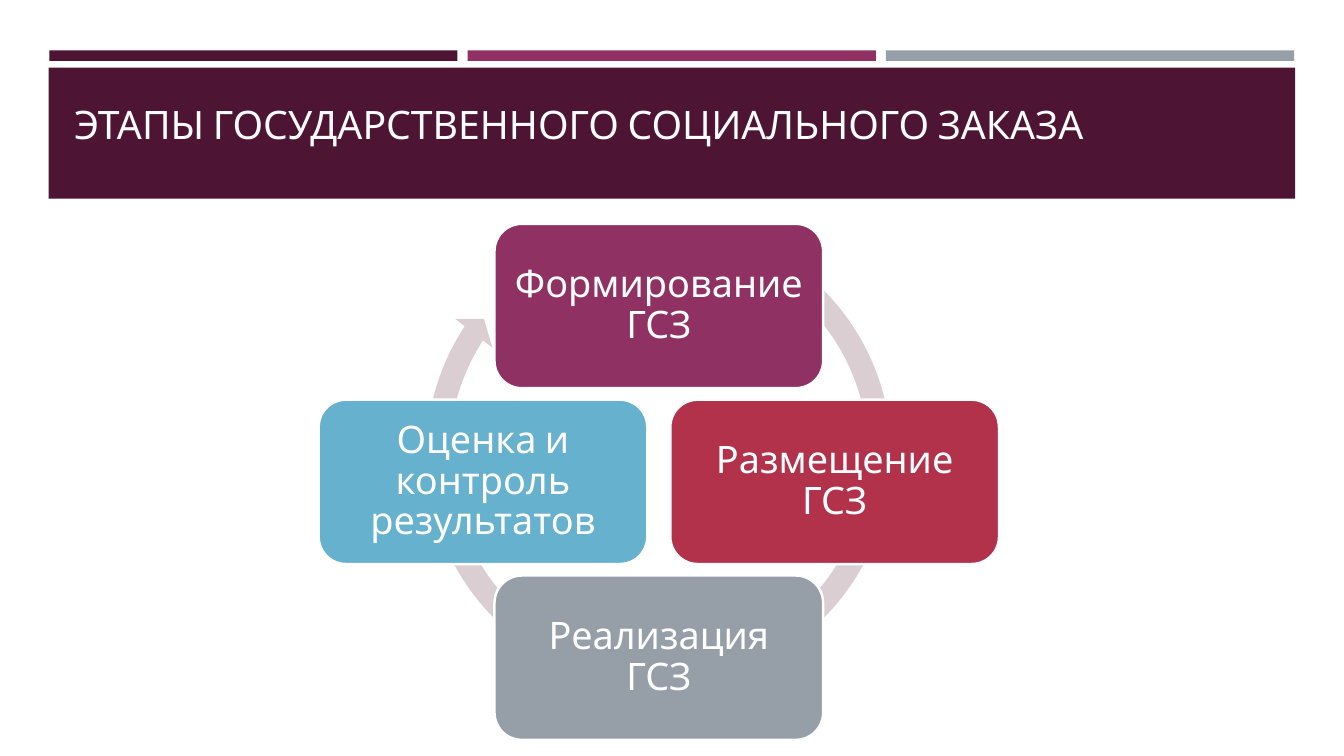
"""Build a slide showing the four-stage cycle of a state social order."""
from pptx import Presentation
from pptx.dml.color import RGBColor
from pptx.enum import shapes, text
from pptx.util import Pt

PLUM = RGBColor(0x4D, 0x14, 0x34)
MAGENTA = RGBColor(0x90, 0x31, 0x63)
GREY = RGBColor(0x96, 0x9F, 0xA7)
RED = RGBColor(0xB2, 0x32, 0x4B)
BLUE = RGBColor(0x66, 0xB1, 0xCE)
PALE = RGBColor(0xDB, 0xCE, 0xD3)
WHITE = RGBColor(0xFF, 0xFF, 0xFF)
FONT = "Cabin"

TITLE = "ЭТАПЫ ГОСУДАРСТВЕННОГО СОЦИАЛЬНОГО ЗАКАЗА"
BAR_COLORS = [PLUM, MAGENTA, GREY]
STAGES = [
    ("Формирование ГСЗ", MAGENTA, (0, -1)),
    ("Размещение ГСЗ", RED, (1, 0)),
    ("Реализация ГСЗ", GREY, (0, 1)),
    ("Оценка и контроль результатов", BLUE, (-1, 0)),
]
ARROW_ADJUSTMENTS = [0.047, 2.729, 127.899, 180.593, 0.048]

BAR_LEFT, BAR_WIDTH, BAR_PITCH = 35.2, 291.6, 298.8
CENTER_X, CENTER_Y, RADIUS = 470.6, 344.2, 125.6
STAGE_WIDTH, STAGE_HEIGHT = 234.8, 117.4
ARROW_SIZE, ARROW_TOP = 349.2, 149.8


def add_filled(slide, kind, left, top, width, height, color):
    """Add a flat preset shape without an outline."""
    shape = slide.shapes.add_shape(kind, Pt(left), Pt(top), Pt(width), Pt(height))
    shape.shadow.inherit = False
    shape.fill.solid()
    shape.fill.fore_color.rgb = color
    shape.line.fill.background()
    return shape


def write(shape, content, size, alignment, anchor):
    """Put one white paragraph into a shape."""
    frame = shape.text_frame
    frame.text = content
    frame.word_wrap = True
    frame.vertical_anchor = anchor
    paragraph = frame.paragraphs[0]
    paragraph.alignment = alignment
    paragraph.font.name = FONT
    paragraph.font.size = Pt(size)
    paragraph.font.color.rgb = WHITE
    return frame


def add_header(slide):
    """Add the three bars, the title band and the title."""
    rectangle = shapes.MSO_SHAPE.RECTANGLE
    for index, color in enumerate(BAR_COLORS):
        add_filled(slide, rectangle, BAR_LEFT + index * BAR_PITCH, 36, BAR_WIDTH, 7.5, color)
    add_filled(slide, rectangle, 34.8, 48.4, 890.4, 93.6, PLUM)
    title = slide.shapes.title
    title.left, title.top, title.width, title.height = Pt(46), Pt(55.4), Pt(868.4), Pt(53.3)
    write(title, TITLE, 28, text.PP_ALIGN.LEFT, text.MSO_ANCHOR.BOTTOM)
    slide.shapes._spTree.append(title._element)


def add_cycle(slide):
    """Add the circular arrow and the stages placed around its centre."""
    arrow = add_filled(slide, shapes.MSO_SHAPE.CIRCULAR_ARROW, CENTER_X - ARROW_SIZE / 2,
                       ARROW_TOP, ARROW_SIZE, ARROW_SIZE, PALE)
    for index, value in enumerate(ARROW_ADJUSTMENTS):
        arrow.adjustments[index] = value
    for label, color, (across, down) in STAGES:
        stage = add_filled(slide, shapes.MSO_SHAPE.ROUNDED_RECTANGLE,
                           CENTER_X + across * RADIUS - STAGE_WIDTH / 2,
                           CENTER_Y + down * RADIUS - STAGE_HEIGHT / 2,
                           STAGE_WIDTH, STAGE_HEIGHT, color)
        stage.line.color.rgb = WHITE
        stage.line.width = Pt(1.75)
        frame = write(stage, label, 27, text.PP_ALIGN.CENTER, text.MSO_ANCHOR.MIDDLE)
        frame.margin_left = frame.margin_right = Pt(7.5)
        frame.margin_top = frame.margin_bottom = Pt(7.5)
        frame.paragraphs[0].line_spacing = 0.9


def main():
    """Create and save the presentation."""
    presentation = Presentation()
    presentation.slide_width, presentation.slide_height = Pt(960), Pt(540)
    slide = presentation.slides.add_slide(presentation.slide_layouts[5])
    add_header(slide)
    add_cycle(slide)
    presentation.save("out.pptx")


if __name__ == "__main__":
    main()
